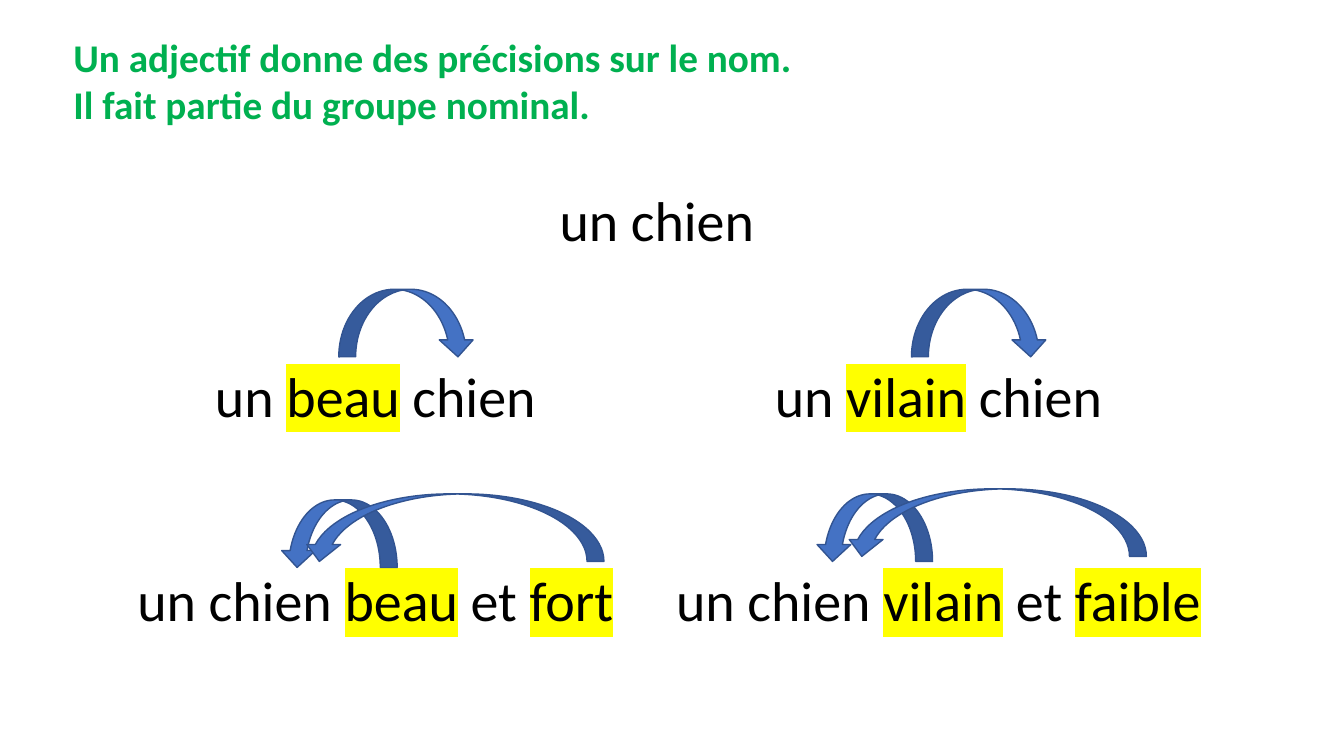
from dataclasses import dataclass

from lxml.etree import SubElement
from pptx import Presentation
from pptx.dml.color import RGBColor
from pptx.enum.shapes import MSO_SHAPE
from pptx.enum.text import PP_ALIGN
from pptx.oxml.ns import qn
from pptx.slide import Slide
from pptx.table import _Cell
from pptx.util import Inches, Pt

GREEN = RGBColor(0x00, 0xB0, 0x50)
BLACK = RGBColor(0x00, 0x00, 0x00)
YELLOW = RGBColor(0xFF, 0xFF, 0x00)
BLUE = RGBColor(0x44, 0x72, 0xC4)
DARK_BLUE = RGBColor(0x32, 0x54, 0x91)

RULE_FONT = {"name": "Calibri", "size": Pt(28), "bold": True}
EXAMPLE_FONT = {"name": "Calibri", "size": Pt(40)}
RULE = ["Un adjectif donne des précisions sur le nom.",
        "Il fait partie du groupe nominal."]


@dataclass
class Example:
    row: int
    col: int
    words: list[str]  # every second piece is a highlighted adjective
    top_margin: float = 0.68


@dataclass
class Arrow:
    left: float
    top: float
    width: float
    to_left: bool = True


EXAMPLES = [
    Example(0, 0, ["un chien"], 0),
    Example(1, 0, ["un ", "beau", " chien"]),
    Example(1, 1, ["un ", "vilain", " chien"]),
    Example(2, 0, ["un chien ", "beau", " et ", "fort"]),
    Example(2, 1, ["un chien ", "vilain", " et ", "faible"]),
]
ROW_HEIGHTS = [1.06, 2.03, 2.03]
ARROWS = [
    Arrow(3.36, 2.87, 1.35, False),
    Arrow(9.04, 2.87, 1.35, False),
    Arrow(2.78, 4.96, 1.16),
    Arrow(8.09, 4.9, 1.16),
    Arrow(3, 4.9, 2.99),
    Arrow(8.38, 4.85, 2.99),
]


def add_run(p, text: str, font: dict, color: RGBColor):
    r = p.add_run()
    r.text = text
    for name, value in font.items():
        setattr(r.font, name, value)
    r.font.color.rgb = color
    return r


def highlight(r, color: RGBColor) -> None:
    rpr = r.font._element
    mark = SubElement(rpr, qn("a:highlight"))
    SubElement(mark, qn("a:srgbClr")).set("val", str(color))
    rpr.find(qn("a:solidFill")).addnext(mark)


def fill_cell(cell: _Cell, example: Example) -> None:
    margins = {"margin_left": 0.07, "margin_right": 0.07,
               "margin_top": example.top_margin, "margin_bottom": 0}
    for name, value in margins.items():
        setattr(cell, name, Inches(value))
    p = cell.text_frame.paragraphs[0]
    p.alignment = PP_ALIGN.CENTER
    for i, word in enumerate(example.words):
        r = add_run(p, word, EXAMPLE_FONT, BLACK)
        if i % 2:
            highlight(r, YELLOW)


def add_examples(slide: Slide) -> None:
    table = slide.shapes.add_table(3, 2, Inches(0.93), Inches(1.87), Inches(11.17),
                                   Inches(sum(ROW_HEIGHTS))).table
    table.first_row = table.horz_banding = False
    for row, height in zip(table.rows, ROW_HEIGHTS):
        row.height = Inches(height)
    for cell in table.iter_cells():
        cell.fill.background()
    table.cell(0, 0).merge(table.cell(0, 1))
    for example in EXAMPLES:
        fill_cell(table.cell(example.row, example.col), example)


def add_rule(slide: Slide) -> None:
    tf = slide.shapes.add_textbox(Inches(0.63), Inches(0.28),
                                  Inches(12.08), Inches(1.04)).text_frame
    tf.word_wrap = True
    for i, line in enumerate(RULE):
        p = tf.add_paragraph() if i else tf.paragraphs[0]
        add_run(p, line, RULE_FONT, GREEN)


def add_arrow(slide: Slide, arrow: Arrow) -> None:
    s = slide.shapes.add_shape(MSO_SHAPE.CURVED_DOWN_ARROW, Inches(arrow.left),
                               Inches(arrow.top), Inches(arrow.width), Inches(0.67))
    s.shadow.inherit = False
    s.fill.solid()
    s.fill.fore_color.rgb = BLUE
    s.line.color.rgb = DARK_BLUE
    s.line.width = Pt(1)
    if arrow.to_left:
        s.element.spPr.find(qn("a:xfrm")).set("flipH", "1")


def main() -> None:
    prs = Presentation()
    prs.slide_width, prs.slide_height = Inches(13.33), Inches(7.5)
    slide = prs.slides.add_slide(prs.slide_layouts[6])

    # Example phrases, the rule above them, and arrows from adjective to noun
    add_examples(slide)
    add_rule(slide)
    for arrow in ARROWS:
        add_arrow(slide, arrow)
    prs.save("out.pptx")


if __name__ == "__main__":
    main()
